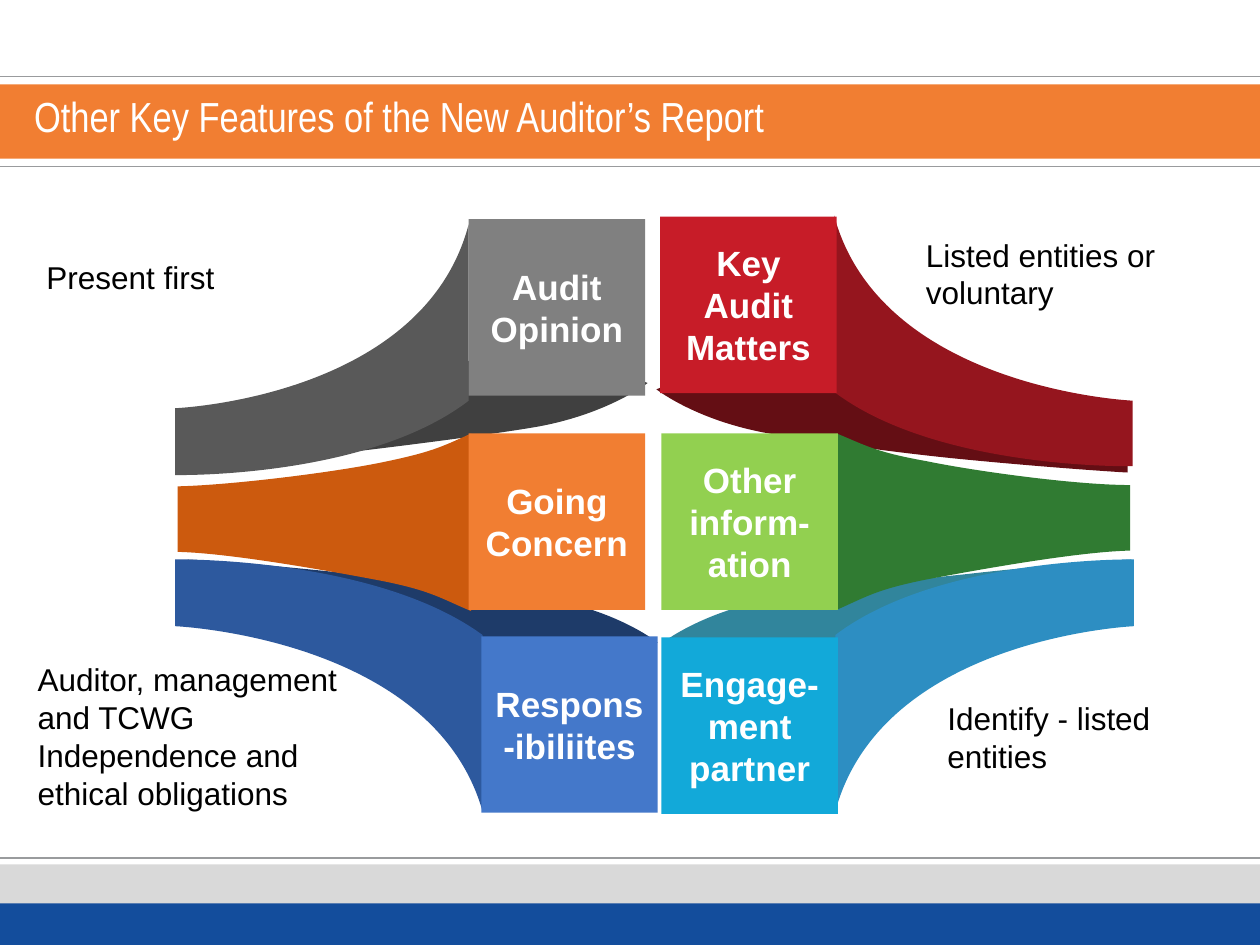
import pptx
import pptx.util
import pptx.dml.color
import pptx.enum.shapes
import pptx.enum.text
import pptx.oxml.ns
import lxml.etree

Inches = pptx.util.Inches
Align = pptx.enum.text.PP_ALIGN
Anchor = pptx.enum.text.MSO_ANCHOR
qn = pptx.oxml.ns.qn

# Content
HEX = {
    "white": "FFFFFF", "black": "000000", "rule": "999B9D", "pale": "D9D9D9",
    "navy": "134D9C", "orange": "F17E32", "rust": "CC5A0E",
    "grey": "808080", "slate": "595959", "coal": "404040",
    "red": "C71C28", "wine": "95151E", "maroon": "640E14",
    "lime": "92D050", "green": "307B32",
    "sky": "12A9D9", "azure": "2D8EC2", "teal": "31859C",
    "blue": "4478CA", "cobalt": "2D599E", "ink": "1E3B69",
}
TITLE = "Other Key Features of the New Auditor’s Report"
BANDS = [("pale", 6.86, 0.64), ("orange", 0.67, 0.59), ("navy", 7.17, 0.33)]
RULES = [0.61, 1.32, 6.81]
SIDE = 1.4
BOXES = [
    ("Audit Opinion", "grey", 3.72, 1.74),
    ("Key Audit Matters", "red", 5.24, 1.72),
    ("Other inform-ation", "lime", 5.25, 3.44),
    ("Going Concern", "orange", 3.72, 3.44),
    ("Engage-ment partner", "sky", 5.25, 5.06),
    ("Respons-ibiliites", "blue", 3.82, 5.05),
]
NOTES = [
    (["Auditor, management and TCWG",
      "Independence and ethical obligations"], 0.2, 5.19, 2.94, 1.31),
    (["Identify - listed entities"], 7.42, 5.5, 1.99, 0.71),
    (["Present first"], 0.27, 2, 2.76, 0.4),
    (["Listed entities or voluntary"], 7.25, 1.82, 2.84, 0.71),
]
# Outlines: a pair is a straight corner, six numbers are a Bezier curve
FOLDS = [
    ("coal", [(3.44, 2.94), (1.4, 3.63), (1.4, 3.7),
              (1.43, 3.7, 2.05, 3.66, 2.76, 3.59),
              (3.36, 3.52, 4.18, 3.41, 4.35, 3.37),
              (4.86, 3.26, 5.14, 3.04, 5.14, 3.04), (4.3, 2.71)]),
    ("ink", [(1.49, 4.51), (3.53, 5.21), (4.38, 5.43), (5.22, 5.1),
             (5.22, 5.1, 4.95, 4.88, 4.44, 4.77),
             (4.26, 4.74, 3.45, 4.62, 2.84, 4.56),
             (2.14, 4.48, 1.51, 4.44, 1.49, 4.44)]),
    ("maroon", [(5.21, 3.09), (5.21, 3.09, 5.49, 3.31, 6, 3.42),
                (6.17, 3.46, 6.99, 3.58, 7.59, 3.64),
                (8.3, 3.71, 8.92, 3.75, 8.95, 3.75),
                (8.95, 3.68), (6.91, 2.99), (6.05, 2.76)]),
    ("teal", [(7.64, 4.56), (7.04, 4.62, 6.22, 4.74, 6.05, 4.77),
              (5.54, 4.88, 5.26, 5.1, 5.26, 5.1),
              (6.1, 5.43), (6.96, 5.21), (8.99, 4.51), (8.98, 4.44),
              (8.96, 4.44, 8.34, 4.48, 7.64, 4.56)]),
]
WINGS = [
    ("azure", [(6.63, 5.04), (6.63, 6.44), (7, 5.06, 9, 4.97, 9, 4.97),
               (9, 4.44), (8.97, 4.44), (8.75, 4.44, 7.38, 4.47, 6.63, 5.04)]),
    ("slate", [(1.39, 3.24), (1.39, 3.77),
               (1.39, 3.77, 2.91, 3.8, 3.72, 3.18), (3.72, 1.78),
               (3.36, 3.16, 1.39, 3.24, 1.39, 3.24)]),
    ("wine", [(6.62, 3.11), (7.44, 3.73, 8.99, 3.7, 8.99, 3.7),
              (8.99, 3.18), (8.99, 3.18, 6.99, 3.09, 6.62, 1.71)]),
    ("green", [(6.64, 4.84), (6.87, 4.74, 6.95, 4.68, 7.35, 4.6),
               (7.72, 4.53, 8.54, 4.38, 8.97, 4.37), (8.97, 3.85),
               (8.54, 3.85, 7.74, 3.74, 7.35, 3.66),
               (6.96, 3.59, 6.88, 3.54, 6.64, 3.44)]),
    ("rust", [(3.03, 3.67), (2.64, 3.75, 1.84, 3.85, 1.41, 3.86), (1.41, 4.38),
              (1.84, 4.39, 2.66, 4.54, 3.03, 4.61),
              (3.43, 4.69, 3.5, 4.75, 3.74, 4.85), (3.74, 3.44),
              (3.5, 3.55, 3.42, 3.59, 3.03, 3.67)]),
    ("cobalt", [(1.39, 4.44), (1.39, 4.97),
                (1.39, 4.97, 3.44, 5.06, 3.83, 6.44), (3.83, 5.04),
                (3.05, 4.47, 1.65, 4.44, 1.42, 4.44)]),
]
FONTS = {
    "title": {"name": "Arial Narrow", "size": pptx.util.Pt(24), "bold": False},
    "box": {"name": "Arial", "size": pptx.util.Pt(20), "bold": True},
    "note": {"name": "Arial", "size": pptx.util.Pt(18), "bold": False},
}


def tint(name):
    return pptx.dml.color.RGBColor.from_string(HEX[name])


def paint(shape, name):
    shape.shadow.inherit = False
    shape.fill.solid()
    shape.fill.fore_color.rgb = tint(name)
    shape.line.fill.background()
    return shape


def block(name, *place):
    kind = pptx.enum.shapes.MSO_SHAPE.RECTANGLE
    return paint(shapes.add_shape(kind, *map(Inches, place)), name)


def write(shape, lines, style, color, align, **frame):
    text = shape.text_frame
    text.text = "\n".join(lines)
    for key, value in {"word_wrap": True, **frame}.items():
        setattr(text, key, value)
    for para in text.paragraphs:
        para.alignment = align
        para.font.color.rgb = tint(color)
        for key, value in FONTS[style].items():
            setattr(para.font, key, value)


def bend(name, parts):
    """Build the outline from its corners, then round the curved sides."""
    parts = [tuple(map(Inches, part)) for part in parts]
    ends = [part[-2:] for part in parts]
    pen = shapes.build_freeform(*ends[0])
    pen.add_line_segments(ends[1:], close=True)
    form = paint(pen.convert_to_shape(), name)
    sides = list(form._element.iter(qn("a:lnTo")))
    for side, part in zip(sides, parts[1:]):
        if len(part) == 2:
            continue
        curve = lxml.etree.Element(qn("a:cubicBezTo"))
        for x, y in zip(part[::2], part[1::2]):
            lxml.etree.SubElement(curve, qn("a:pt"),
                                  x=str(x - form.left), y=str(y - form.top))
        side.getparent().replace(side, curve)


deck = pptx.Presentation()
deck.slide_width, deck.slide_height = Inches(10), Inches(7.5)
slide = deck.slides.add_slide(deck.slide_layouts[5])
shapes = slide.shapes

# Bands and rules
for name, top, height in BANDS:
    block(name, 0, top, 10, height)
for y in RULES:
    rule = shapes.add_connector(pptx.enum.shapes.MSO_CONNECTOR.STRAIGHT,
                                *map(Inches, (0, y, 10.04, y)))
    rule.line.color.rgb = tint("rule")
    rule.line.width = pptx.util.Pt(0.75)
    lxml.etree.SubElement(rule._element.spPr, qn("a:effectLst"))

# Title, brought in front of its band
title = shapes.title
place = {"left": 0.27, "top": 0.63, "width": 8.25, "height": 0.58}
for key, value in place.items():
    setattr(title, key, Inches(value))
edges = ("left", "top", "right", "bottom")
write(title, [TITLE], "title", "white", Align.LEFT,
      vertical_anchor=Anchor.MIDDLE,
      auto_size=pptx.enum.text.MSO_AUTO_SIZE.NONE,
      **{"margin_" + edge: 0 for edge in edges})
shapes._spTree.append(title._element)

# Folds behind, then wings, then the six boxes
for name, parts in FOLDS + WINGS:
    bend(name, parts)
for label, name, left, top in BOXES:
    write(block(name, left, top, SIDE, SIDE), [label], "box", "white",
          Align.CENTER, vertical_anchor=Anchor.MIDDLE)

# Side notes
for lines, *place in NOTES:
    write(shapes.add_textbox(*map(Inches, place)), lines, "note", "black",
          Align.LEFT, auto_size=pptx.enum.text.MSO_AUTO_SIZE.SHAPE_TO_FIT_TEXT)

deck.save("out.pptx")
